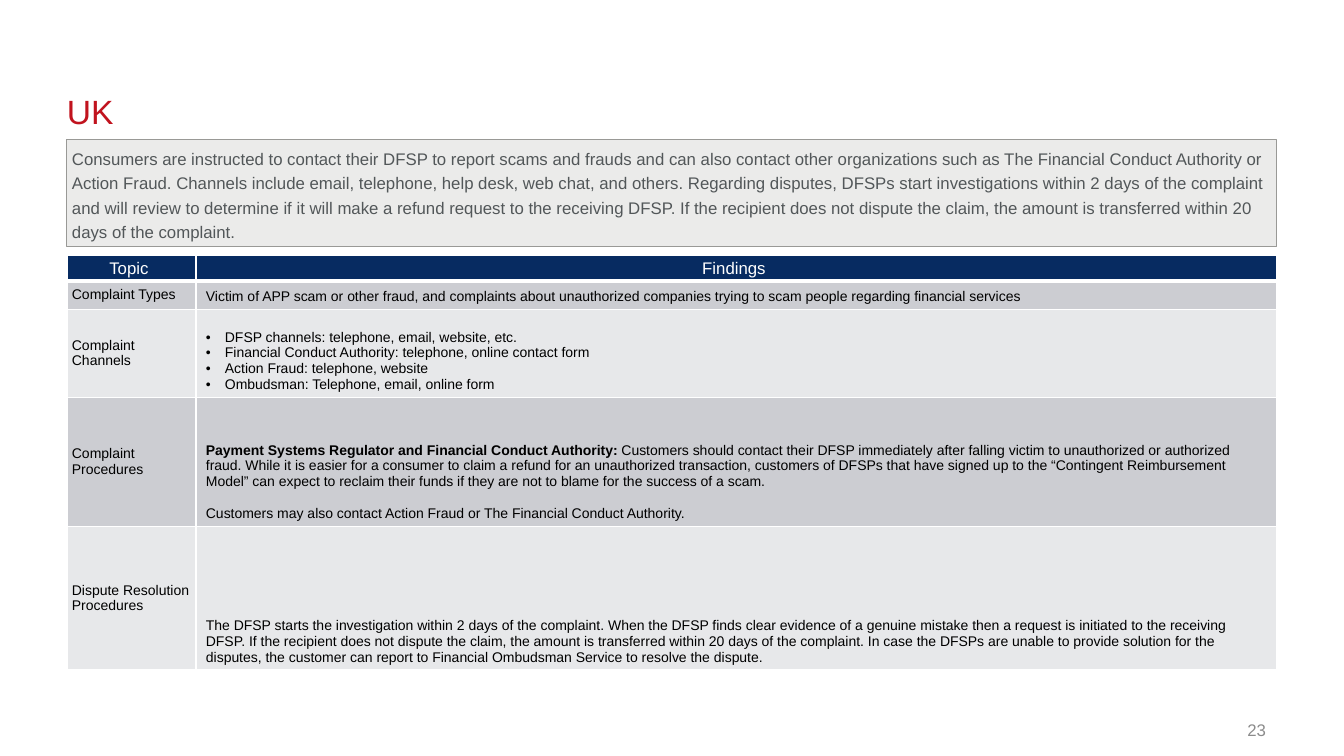
from lxml.etree import SubElement
from pptx import Presentation
from pptx.dml.color import RGBColor
from pptx.enum.shapes import MSO_SHAPE
from pptx.enum.text import MSO_ANCHOR, MSO_AUTO_SIZE, PP_ALIGN
from pptx.oxml.ns import qn
from pptx.util import Emu, Pt

WIDTH, HEIGHT = 1344, 756
SCALE = 12192000 / WIDTH
LEFT, CONTENT_WIDTH = 67, 1210
COLORS = {
    "title": "C1131E", "number": "8C8C8C", "summary": "525759",
    "panel": "EBEBEA", "panel_line": "999996", "header": "072B61",
    "band_dark": "CCCDD2", "band_light": "E7E8EA",
    "white": "FFFFFF", "black": "000000",
}
SIDES = ("margin_left", "margin_top", "margin_right", "margin_bottom")
BULLET_INDENT = 19

SUMMARY = (
    "Consumers are instructed to contact their DFSP to report scams and frauds and can also "
    "contact other organizations such as The Financial Conduct Authority or Action Fraud. "
    "Channels include email, telephone, help desk, web chat, and others. Regarding disputes, "
    "DFSPs start investigations within 2 days of the complaint and will review to determine if "
    "it will make a refund request to the receiving DFSP. If the recipient does not dispute the "
    "claim, the amount is transferred within 20 days of the complaint."
)
HEADINGS = ("Topic", "Findings")
# Each finding: (topic, row height, paragraphs, paragraph format)
FINDINGS = [
    ("Complaint Types", 28, [
        "Victim of APP scam or other fraud, and complaints about unauthorized companies trying "
        "to scam people regarding financial services"], {}),
    ("Complaint Channels", 88, [
        "DFSP channels: telephone, email, website, etc.",
        "Financial Conduct Authority: telephone, online contact form",
        "Action Fraud: telephone, website",
        "Ombudsman: Telephone, email, online form"], {"bullet": True}),
    ("Complaint Procedures", 129, [
        ("Payment Systems Regulator and Financial Conduct Authority: ",
         "Customers should contact their DFSP immediately after falling victim to unauthorized "
         "or authorized fraud. While it is easier for a consumer to claim a refund for an "
         "unauthorized transaction, customers of DFSPs that have signed up to the “Contingent "
         "Reimbursement Model” can expect to reclaim their funds if they are not to blame for "
         "the success of a scam."),
        "Customers may also contact Action Fraud or The Financial Conduct Authority."],
     {"gap": 11.5}),
    ("Dispute Resolution Procedures", 144, [
        "The DFSP starts the investigation within 2 days of the complaint. When the DFSP finds "
        "clear evidence of a genuine mistake then a request is initiated to the receiving DFSP. "
        "If the recipient does not dispute the claim, the amount is transferred within 20 days "
        "of the complaint. In case the DFSPs are unable to provide solution for the disputes, "
        "the customer can report to Financial Ombudsman Service to resolve the dispute."], {}),
]


def px(length):
    return Emu(round(length * SCALE))


def rgb(name):
    return RGBColor.from_string(COLORS[name])


def assign(target, values):
    for name, value in values.items():
        setattr(target, name, value)


def margins(*lengths):
    return dict(zip(SIDES, map(px, lengths)))


class SlideBuilder:
    def __init__(self, slide, font="Arial"):
        self.slide = slide
        self.font = font

    def add_paragraphs(self, frame, paragraphs, size, color, align=PP_ALIGN.LEFT,
                       spacing=None, bullet=False, gap=0):
        """Fill a frame; a tuple paragraph holds a bold lead and its plain rest."""
        for index, content in enumerate(paragraphs):
            paragraph = frame.add_paragraph() if index else frame.paragraphs[0]
            if bullet:
                self.add_bullet(paragraph)
            assign(paragraph, {"alignment": align, "line_spacing": spacing})
            if index and gap:
                paragraph.space_before = Pt(gap)
            lead, rest = content if isinstance(content, tuple) else ("", content)
            for text, bold in ((lead, True), (rest, False)):
                if text:
                    run = paragraph.add_run()
                    run.text = text
                    assign(run.font, {"name": self.font, "size": Pt(size), "bold": bold})
                    run.font.color.rgb = rgb(color)

    def add_bullet(self, paragraph):
        properties = paragraph._p.get_or_add_pPr()
        properties.set("marL", str(px(BULLET_INDENT)))
        properties.set("indent", str(-px(BULLET_INDENT)))
        SubElement(properties, qn("a:buFont"), typeface=self.font)
        SubElement(properties, qn("a:buChar"), char="•")

    def text(self, box, content, size, color, inset=(0, 0, 0, 0), **style):
        frame = self.slide.shapes.add_textbox(*map(px, box)).text_frame
        assign(frame, {"word_wrap": True, "vertical_anchor": MSO_ANCHOR.MIDDLE,
                       **margins(*inset)})
        self.add_paragraphs(frame, [content], size, color, **style)

    def panel(self, box, content, size, color, **style):
        panel = self.slide.shapes.add_shape(MSO_SHAPE.RECTANGLE, *map(px, box))
        panel.shadow.inherit = False
        panel.fill.solid()
        panel.fill.fore_color.rgb = rgb("panel")
        panel.line.color.rgb = rgb("panel_line")
        panel.line.width = Pt(0.75)
        assign(panel.text_frame, {"word_wrap": True, "vertical_anchor": MSO_ANCHOR.TOP,
                                  "auto_size": MSO_AUTO_SIZE.SHAPE_TO_FIT_TEXT,
                                  **margins(5, 5, 5, 5)})
        self.add_paragraphs(panel.text_frame, [content], size, color, **style)

    def table(self, left, top, widths, heights):
        box = (left, top, sum(widths), sum(heights))
        table = self.slide.shapes.add_table(len(heights), len(widths), *map(px, box)).table
        table.horz_banding = False
        for column, width in zip(table.columns, widths):
            column.width = px(width)
        for row, height in zip(table.rows, heights):
            row.height = px(height)
        return table

    def cell(self, cell, paragraphs, size, color, fill, anchor, inset, borders, **style):
        """Fill a cell; borders gives left, right, top and bottom widths in points."""
        assign(cell, {"vertical_anchor": anchor, **margins(*inset)})
        properties = cell._tc.get_or_add_tcPr()
        for side, width in zip("LRTB", borders):
            line = SubElement(properties, qn(f"a:ln{side}"), w=str(Pt(width)))
            solid = SubElement(line, qn("a:solidFill"))
            SubElement(solid, qn("a:srgbClr"), val=COLORS["white"])
        cell.fill.solid()
        cell.fill.fore_color.rgb = rgb(fill)
        self.add_paragraphs(cell.text_frame, paragraphs, size, color, **style)


def add_findings(builder):
    heights = [25] + [height for _, height, _, _ in FINDINGS]
    table = builder.table(LEFT, 255, (129, 1081), heights)
    for column, heading in enumerate(HEADINGS):
        builder.cell(table.cell(0, column), [heading], 12, "white", "header",
                     MSO_ANCHOR.BOTTOM, (5, 3, 10, 3), (1, 1, 1, 3), align=PP_ALIGN.CENTER)
    for row, (topic, _, paragraphs, style) in enumerate(FINDINGS, start=1):
        fill = "band_dark" if row % 2 else "band_light"
        borders = (1, 1, 3 if row == 1 else 1, 1)
        builder.cell(table.cell(row, 0), [topic], 10, "black", fill,
                     MSO_ANCHOR.MIDDLE, (5, 3, 5, 3), borders)
        builder.cell(table.cell(row, 1), paragraphs, 10, "black", fill,
                     MSO_ANCHOR.BOTTOM, (10, 5, 10, 5), borders, **style)


def main():
    deck = Presentation()
    assign(deck, {"slide_width": px(WIDTH), "slide_height": px(HEIGHT)})
    builder = SlideBuilder(deck.slides.add_slide(deck.slide_layouts[6]))
    builder.text((LEFT, 65, CONTENT_WIDTH, 93), "UK", 24, "title")
    builder.text((1221, 718, 55, 23), "23", 12, "number",
                 inset=(10, 5, 10, 5), align=PP_ALIGN.RIGHT)
    builder.panel((LEFT, 140, CONTENT_WIDTH, 107), SUMMARY, 12, "summary", spacing=1.2)
    add_findings(builder)
    deck.save("out.pptx")


if __name__ == "__main__":
    main()
